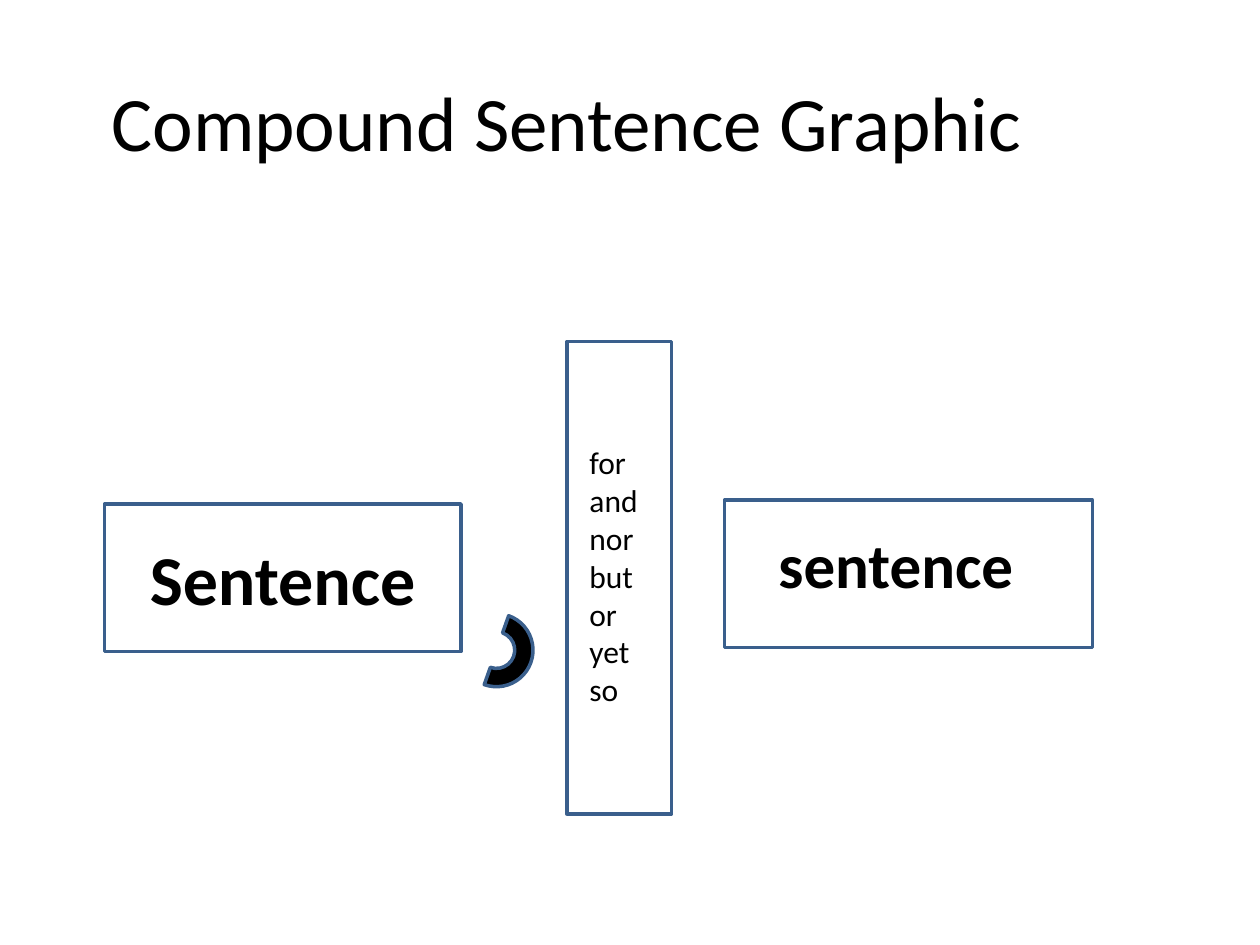
from pptx import Presentation
from pptx.dml.color import RGBColor
from pptx.enum import shapes, text
from pptx.util import Inches, Pt

COLORS = {"ink": "000000", "paper": "FFFFFF", "outline": "3A5F8C"}
FONT = "Calibri"
SHAPE = shapes.MSO_SHAPE


def rgb(name):
    return RGBColor.from_string(COLORS[name])


def add_run(p, words, size, bold=False):
    r = p.add_run()
    r.text = words
    r.font.name = FONT
    r.font.size = Pt(size)
    r.font.bold = bold
    r.font.color.rgb = rgb("ink")


def set_title(s, words, box):
    sp = s.shapes.title
    sp.left, sp.top, sp.width, sp.height = map(Inches, box)
    tf = sp.text_frame
    tf.vertical_anchor = text.MSO_ANCHOR.MIDDLE
    p = tf.paragraphs[0]
    p.alignment = text.PP_ALIGN.CENTER
    add_run(p, words, 44)


def add_outlined(s, kind, box, fill="paper", rotation=0):
    sp = s.shapes.add_shape(kind, *map(Inches, box))
    sp.shadow.inherit = False
    sp.rotation = rotation
    sp.fill.solid()
    sp.fill.fore_color.rgb = rgb(fill)
    sp.line.color.rgb = rgb("outline")
    sp.line.width = Pt(2)


def add_label(s, lines, box, size, bold=False):
    """Add a text box with one paragraph for each line."""
    tf = s.shapes.add_textbox(*map(Inches, box)).text_frame
    tf.word_wrap = True
    tf.auto_size = text.MSO_AUTO_SIZE.SHAPE_TO_FIT_TEXT
    for i, line in enumerate(lines):
        p = tf.add_paragraph() if i else tf.paragraphs[0]
        add_run(p, line, size, bold)


def main():
    prs = Presentation()
    prs.slide_width, prs.slide_height = Inches(10), Inches(7.5)
    s = prs.slides.add_slide(prs.slide_layouts[5])

    set_title(s, "Compound Sentence Graphic", (0, 0.33, 9, 1.25))

    add_outlined(s, SHAPE.FLOWCHART_PROCESS, (0.83, 4, 2.83, 1.17))
    add_outlined(s, SHAPE.RECTANGLE, (4.5, 2.71, 0.83, 3.75))
    # The rotated arc is the comma before the conjunction.
    add_outlined(s, SHAPE.BLOCK_ARC, (3.65, 4.87, 0.58, 0.58), "ink", 109.5)
    add_outlined(s, SHAPE.RECTANGLE, (5.75, 3.97, 2.92, 1.17))

    add_label(s, ["Sentence"], (1.09, 4.2, 2.31, 0.77), 40, bold=True)
    add_label(s, ["sentence"], (6.08, 4.12, 2.25, 0.71), 36, bold=True)
    conjunctions = ["for", "and", "nor", "but or", "yet so"]
    add_label(s, conjunctions, (4.58, 3.47, 0.67, 2.22), 18)

    prs.save("out.pptx")


if __name__ == "__main__":
    main()
